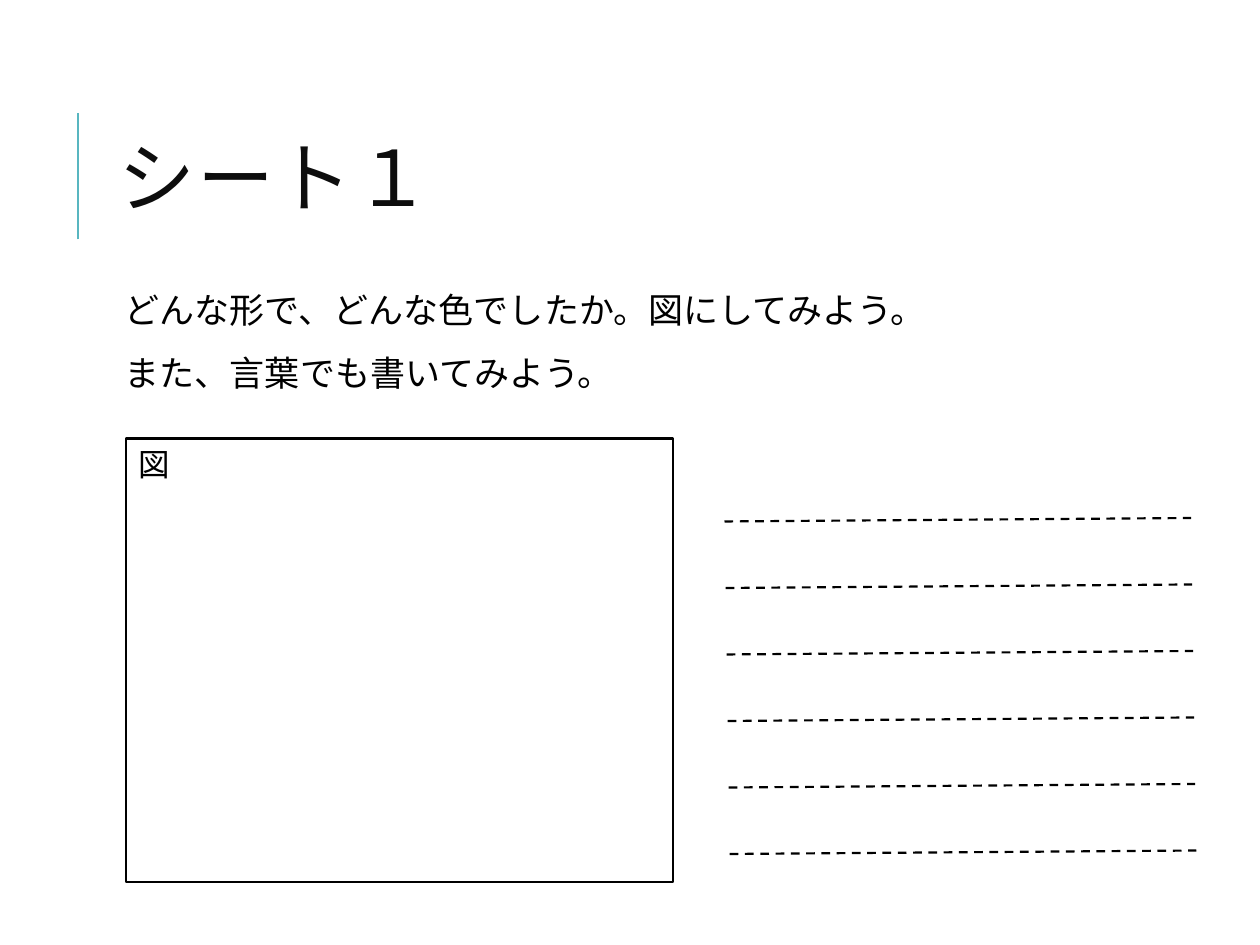
from lxml.etree import SubElement as Sub
from pptx import Presentation
from pptx.dml.color import RGBColor as RGB
from pptx.enum.dml import MSO_LINE as Dash
from pptx.enum.shapes import MSO_CONNECTOR as Conn, MSO_SHAPE as Shape
from pptx.enum.text import MSO_ANCHOR as Anchor, MSO_AUTO_SIZE as Fit, PP_ALIGN as Align
from pptx.oxml.ns import qn
from pptx.util import Pt

TEAL = RGB(0x58, 0xB6, 0xC0)
INK = RGB(0x0D, 0x0D, 0x0D)
BLACK = RGB(0, 0, 0)


def style(para, face, size, color):
    """Set the font of a whole paragraph."""
    font = para.font
    font.name, font.size = face, Pt(size)
    font.color.rgb = color


def place(item, left, top, width, height):
    """Move and size a shape, in points."""
    item.left, item.top = Pt(left), Pt(top)
    item.width, item.height = Pt(width), Pt(height)


def rule(slide, start, end, color, width, dash=None):
    """Draw a straight line without a shadow."""
    ends = [Pt(n) for n in (*start, *end)]
    line = slide.shapes.add_connector(Conn.STRAIGHT, *ends)
    line.line.color.rgb = color
    line.line.width = Pt(width)
    if dash:
        line.line.dash_style = dash
    Sub(line._element.spPr, qn("a:effectLst"))


def bullet(para):
    """Give a paragraph a blank teal bullet and a hanging indent."""
    props = para._p.get_or_add_pPr()
    props.set("marL", str(Pt(7.2)))
    props.set("indent", str(Pt(-7.2)))
    tint = Sub(props, qn("a:buClr"))
    Sub(tint, qn("a:srgbClr")).set("val", str(TEAL))
    Sub(props, qn("a:buChar")).set("char", " ")


def heading(slide, left, top, width, height):
    """Place the title with the teal bar on its left."""
    bar = left - 15.8
    rule(slide, (bar, top + 90.7), (bar, top + 18.7), TEAL, 1.5)
    title = slide.shapes.title
    place(title, left, top, width, height)
    frame = title.text_frame
    frame.text = "シート１"
    frame.auto_size = Fit.NONE
    frame.vertical_anchor = Anchor.MIDDLE
    para = frame.paragraphs[0]
    para.alignment = Align.LEFT
    para.line_spacing = 0.8
    style(para, "Calibri", 44, INK)
    para._p.pPr.find(qn("a:defRPr")).set("spc", "100")


def task(slide, left, top, width, height):
    """Place the instructions in the body placeholder."""
    body = slide.placeholders[1]
    place(body, left, top, width, height)
    frame = body.text_frame
    frame.text = "どんな形で、どんな色でしたか。図にしてみよう。\nまた、言葉でも書いてみよう。"
    frame.auto_size = Fit.NONE
    frame.margin_left = frame.margin_right = Pt(3.6)
    frame.margin_top = frame.margin_bottom = Pt(3.6)
    for para in frame.paragraphs:
        para.line_spacing = 0.9
        para.space_before, para.space_after = Pt(12), Pt(2)
        bullet(para)
        style(para, "Cabin", 20, BLACK)


def sketch(slide, left, top, width, height):
    """Draw the empty frame for the pupil's picture."""
    box = slide.shapes.add_shape(Shape.RECTANGLE, 0, 0, 0, 0)
    place(box, left, top, width, height)
    box.shadow.inherit = False
    box.fill.background()
    box.line.color.rgb = BLACK
    box.line.width = Pt(1.25)
    frame = box.text_frame
    frame.word_wrap = True
    frame.vertical_anchor = Anchor.TOP
    frame.text = "図"
    para = frame.paragraphs[0]
    para.alignment = Align.LEFT
    style(para, "Cabin", 18, BLACK)


def notes(slide, left, top, width, height, count=6):
    """Draw evenly spaced dashed writing lines that drift and rise slightly."""
    drift, rise = 0.6, 2
    gap = height / (count - 1)
    for row in range(count):
        x, y = left + row * drift, top + row * gap
        rule(slide, (x, y), (x + width, y - rise), BLACK, 1.25, Dash.DASH)


def main():
    """Build the worksheet and save it."""
    deck = Presentation()
    deck.slide_width, deck.slide_height = Pt(720), Pt(540)
    slide = deck.slides.add_slide(deck.slide_layouts[1])
    heading(slide, 60.5, 46.1, 573.8, 118.1)
    task(slide, 60.5, 164.2, 573.8, 67.7)
    sketch(slide, 72, 250.6, 312.5, 253.4)
    notes(slide, 414, 298, 266.6, 190)
    deck.save("out.pptx")


if __name__ == "__main__":
    main()
